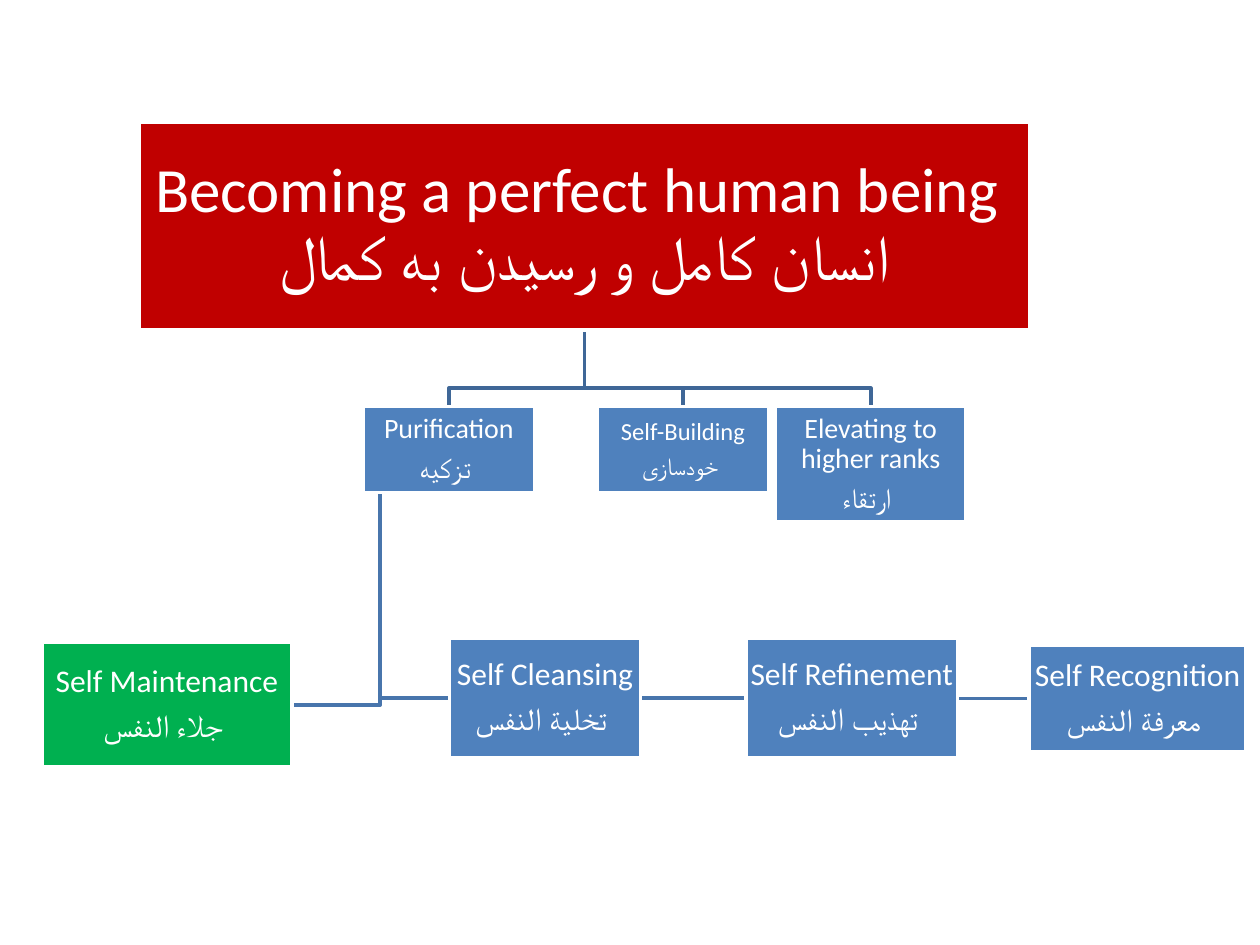
from dataclasses import dataclass

from pptx import Presentation
from pptx.dml.color import RGBColor
from pptx.enum.shapes import MSO_SHAPE
from pptx.enum.text import MSO_ANCHOR, PP_ALIGN
from pptx.util import Pt

RECT = MSO_SHAPE.RECTANGLE
MIDDLE = MSO_ANCHOR.MIDDLE
CENTER = PP_ALIGN.CENTER


@dataclass(frozen=True)
class Theme:
    font: str = "Calibri"
    white: str = "FFFFFF"
    red: str = "C00000"
    blue: str = "4F81BD"
    green: str = "00B050"
    upper_link: str = "3F6797"
    lower_link: str = "4875AC"
    title: int = 36
    large: int = 18
    medium: int = 16
    small: int = 14
    line: int = 2
    leading: float = 0.9
    gap: float = 0.35  # space after, as a share of the type size


@dataclass(frozen=True)
class Box:
    left: float
    top: float
    width: float
    height: float
    lines: tuple
    size: int
    fill: str
    inset: float = 0.8

    @property
    def center(self):
        return self.left + self.width / 2

    @property
    def middle(self):
        return self.top + self.height / 2

    @property
    def right(self):
        return self.left + self.width

    @property
    def bottom(self):
        return self.top + self.height


class Chart:
    def __init__(self, slide, theme):
        self.slide = slide
        self.theme = theme

    def outline(self, sp, color):
        sp.shadow.inherit = False
        sp.line.color.rgb = RGBColor.from_string(color)
        sp.line.width = Pt(self.theme.line)

    def link(self, points, color):
        (x, y), *rest = [(Pt(px), Pt(py)) for px, py in points]
        builder = self.slide.shapes.build_freeform(x, y)
        builder.add_line_segments(rest, close=False)
        sp = builder.convert_to_shape()
        sp.fill.background()
        self.outline(sp, color)

    def box(self, box):
        t = self.theme
        sp = self.slide.shapes.add_shape(
            RECT, Pt(box.left), Pt(box.top), Pt(box.width), Pt(box.height))
        sp.fill.solid()
        sp.fill.fore_color.rgb = RGBColor.from_string(box.fill)
        self.outline(sp, t.white)

        tf = sp.text_frame
        tf.word_wrap = True
        tf.vertical_anchor = MIDDLE
        tf.margin_left = tf.margin_right = Pt(box.inset)
        tf.margin_top = tf.margin_bottom = Pt(box.inset)
        for i, line in enumerate(box.lines):
            p = tf.add_paragraph() if i else tf.paragraphs[0]
            p.text = line
            p.alignment = CENTER
            p.line_spacing = t.leading
            p.space_after = Pt(box.size * t.gap)
            p.font.name = t.font
            p.font.size = Pt(box.size)
            p.font.color.rgb = RGBColor.from_string(t.white)


def main():
    theme = Theme()
    prs = Presentation()
    prs.slide_width, prs.slide_height = Pt(720), Pt(540)
    chart = Chart(prs.slides.add_slide(prs.slide_layouts[6]), theme)

    # Goal at the top
    goal = Box(79.4, 69.8, 509, 118.8,
               ("Becoming a perfect human being \vانسان کامل و رسیدن به کمال",),
               theme.title, theme.red, 1.8)

    # Second level
    row = 232.4
    purification = Box(207.5, row, 98, 49, ("Purification", "تزکیه "),
                       theme.medium, theme.blue)
    building = Box(341.3, row, 98, 49, ("Self-Building", "خودسازی "),
                   theme.small, theme.blue)
    elevating = Box(443, row, 109.2, 65.6,
                    ("Elevating to higher ranks", "ارتقاء "),
                    theme.medium, theme.blue)
    branches = [purification, building, elevating]

    # Steps of purification
    maintenance = Box(24, 367.2, 142.8, 71.2,
                      ("Self Maintenance", "جلاء النفس "),
                      theme.large, theme.green)
    cleansing = Box(256.9, 364.6, 109.2, 68.2,
                    ("Self Cleansing", "تخلیة النفس "),
                    theme.large, theme.blue)
    refinement = Box(426.4, 364.6, 120.8, 68.5,
                     ("Self Refinement", "تهذیب النفس "),
                     theme.large, theme.blue)
    recognition = Box(588.1, 368.8, 124, 60.8,
                      ("Self Recognition", "معرفة النفس "),
                      theme.large, theme.blue)
    steps = [cleansing, refinement, recognition, maintenance]

    # Links from the goal to the second level
    bus = 221.8
    for b in branches:
        chart.link([(goal.center, goal.bottom), (goal.center, bus),
                    (b.center, bus), (b.center, b.top)], theme.upper_link)

    # Links from purification to its steps
    trunk = purification.left + purification.width / 10
    for step in steps:
        end = step.left if step.left > trunk else step.right
        chart.link([(trunk, purification.bottom), (trunk, step.middle),
                    (end, step.middle)], theme.lower_link)

    # Boxes over the links
    for b in [goal, *branches, *steps]:
        chart.box(b)

    prs.save("out.pptx")


if __name__ == "__main__":
    main()
